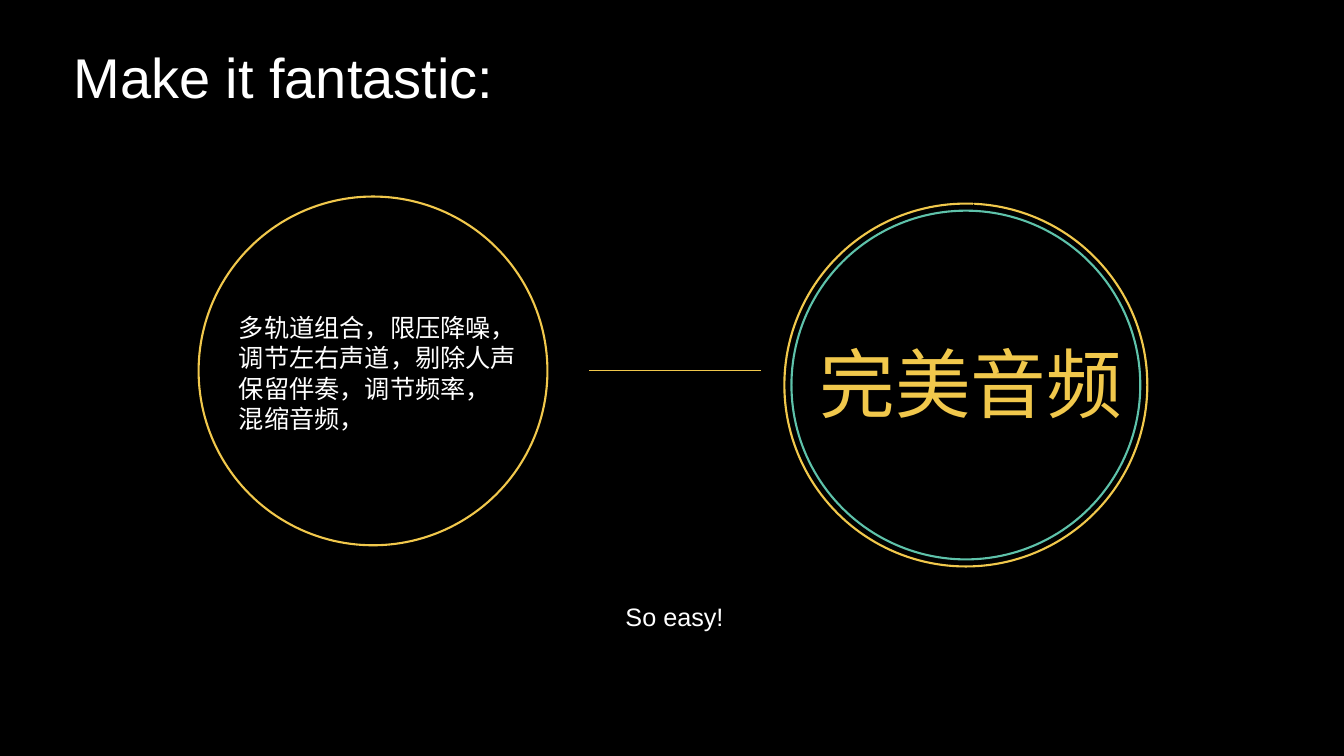
from lxml import etree
from pptx import Presentation
from pptx.dml.color import RGBColor
from pptx.enum.shapes import MSO_CONNECTOR, MSO_SHAPE as Shape
from pptx.enum.text import MSO_AUTO_SIZE as AutoSize, PP_ALIGN as Align
from pptx.oxml.ns import qn
from pptx.util import Inches, Pt

BLACK, WHITE, GOLD, TEAL = "000000", "FFFFFF", "F1C84C", "5EC2AA"
CJK = "Noto Sans CJK SC"
WIDTH, HEIGHT = 13.33, 7.5

# Text: words, (left, top, width, height), font, size, colour, alignment, wrap
TEXTS = [
    ("Make it fantastic:", (0.63, 0.37, 5.92, 0.77), "Arial", 40, WHITE, Align.LEFT, False),
    ("多轨道组合，限压降噪，调节左右声道，剔除人声保留伴奏，调节频率， 混缩音频，",
     (2.27, 3.05, 2.98, 1.31), CJK, 18, WHITE, Align.LEFT, True),
    ("完美音频", (8.03, 3.29, 3.23, 1.01), "League Spartan", 54, GOLD, Align.LEFT, False),
    ("So easy!", (3.93, 5.92, 5.52, 0.4), "Arial", 18, WHITE, Align.CENTER, True),
]

# Rings: centre x, centre y, diameter, preset, colour
STEPS_CENTRE = (3.7, 3.68)
RESULT_CENTRE = (9.58, 3.82)
RINGS = [
    (*RESULT_CENTRE, 3.46, Shape.OVAL, TEAL),
    (*RESULT_CENTRE, 3.6, Shape.BLOCK_ARC, GOLD),
    (*STEPS_CENTRE, 3.46, Shape.OVAL, GOLD),
]
# Start angle, end angle (units of 100000/60000 degree) and thickness
OUTER_ARC = (163.67, 163.29, 0)
LINK_X = (7.55, 5.84)


def rgb(value):
    return RGBColor.from_string(value)


def add_ring(slide, x, y, diameter, preset, colour):
    ring = slide.shapes.add_shape(preset, Inches(x - diameter / 2), Inches(y - diameter / 2),
                                  Inches(diameter), Inches(diameter))
    ring.shadow.inherit = False
    ring.line.color.rgb = rgb(colour)
    ring.line.width = Pt(1.5)
    if preset == Shape.BLOCK_ARC:
        for index, value in enumerate(OUTER_ARC):
            ring.adjustments[index] = value
        ring.fill.solid()
        ring.fill.fore_color.rgb = rgb(colour)
    else:
        ring.fill.background()


def add_text(slide, words, place, font, size, colour, align, wrap):
    frame = slide.shapes.add_textbox(*map(Inches, place)).text_frame
    frame.word_wrap = wrap
    frame.auto_size = AutoSize.SHAPE_TO_FIT_TEXT
    paragraph = frame.paragraphs[0]
    paragraph.alignment = align
    run = paragraph.add_run()
    run.text = words
    run.font.name = font
    run.font.size = Pt(size)
    run.font.color.rgb = rgb(colour)
    # East Asian typeface for the Chinese wording
    etree.SubElement(run.font._element, qn("a:ea")).set("typeface", CJK)


def main():
    deck = Presentation()
    deck.slide_width, deck.slide_height = Inches(WIDTH), Inches(HEIGHT)
    slide = deck.slides.add_slide(deck.slide_layouts[6])
    slide.background.fill.solid()
    slide.background.fill.fore_color.rgb = rgb(BLACK)

    # Circles
    for ring in RINGS:
        add_ring(slide, *ring)

    # Line joining the two circles
    start, end = map(Inches, LINK_X)
    link_y = Inches(STEPS_CENTRE[1])
    link = slide.shapes.add_connector(MSO_CONNECTOR.STRAIGHT, start, link_y, end, link_y)
    link.line.color.rgb = rgb(GOLD)
    link.line.width = Pt(0.75)
    etree.SubElement(link._element.spPr, qn("a:effectLst"))

    # Wording
    for text in TEXTS:
        add_text(slide, *text)

    deck.save("out.pptx")


if __name__ == "__main__":
    main()
